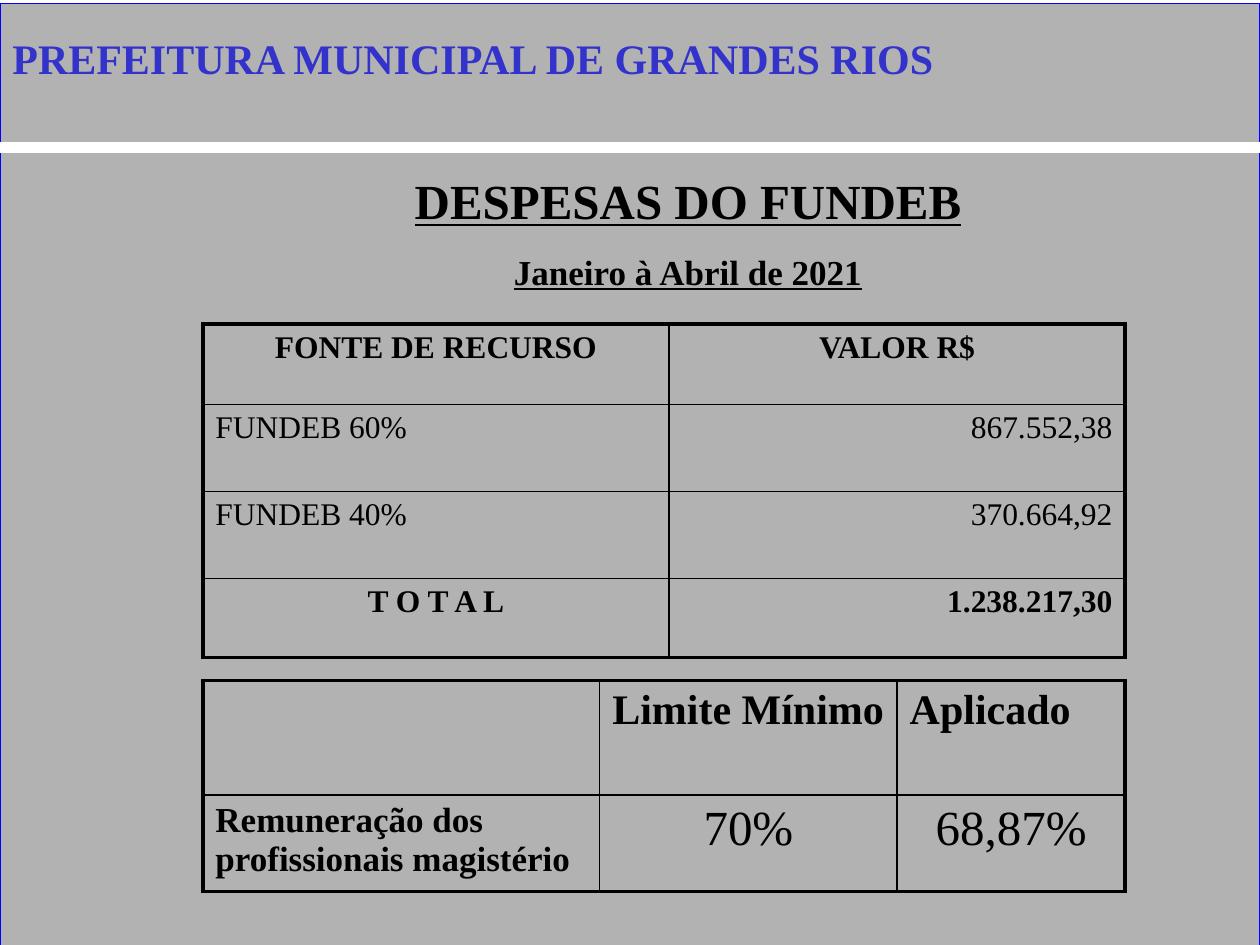
from dataclasses import dataclass

import pptx
import pptx.dml.color
import pptx.enum.shapes
import pptx.enum.text
import pptx.oxml
import pptx.oxml.ns
import pptx.util

Inches = pptx.util.Inches
Pt = pptx.util.Pt
ALIGN = pptx.enum.text.PP_ALIGN


@dataclass(frozen=True)
class Theme:
    font: str = "Times New Roman"
    ink: str = "000000"
    title: str = "3333CC"
    shadow: str = "808080"
    panel: str = "B2B2B2"
    panel_edge: str = "0000FF"
    rule: str = "FFFFFF"
    heading: int = 28
    banner: int = 24
    period: int = 20
    body: int = 18
    outer_border: float = 2.25
    inner_border: float = 1


THEME = Theme()
LEFT = {"alignment": ALIGN.LEFT}
CENTER = {"alignment": ALIGN.CENTER}
RIGHT = {"alignment": ALIGN.RIGHT}
BOLD = {"bold": True}


def rgb(value):
    return pptx.dml.color.RGBColor.from_string(value)


def drawing_xml(tag, attributes="", content=""):
    return pptx.oxml.parse_xml(
        f'<a:{tag} {pptx.oxml.ns.nsdecls("a")} {attributes}>{content}</a:{tag}>')


def solid(color):
    return f'<a:solidFill><a:srgbClr val="{color}"/></a:solidFill>'


def apply(target, formats):
    for name, value in formats.items():
        setattr(target, name, value)


def write(paragraph, text, size, font_format, paragraph_format, color=THEME.ink):
    apply(paragraph, paragraph_format)
    run = paragraph.add_run()
    run.text = text
    apply(run.font, {"name": THEME.font, "size": Pt(size), "bold": False, **font_format})
    run.font.color.rgb = rgb(color)
    return run


def add_text_frame(slide, box):
    frame = slide.shapes.add_textbox(*map(Inches, box)).text_frame
    frame.word_wrap = True
    return frame


def add_background(slide, box, rule_offset):
    left, top, width, height = box
    panel = slide.shapes.add_shape(
        pptx.enum.shapes.MSO_SHAPE.RECTANGLE, *map(Inches, box))
    panel.shadow.inherit = False
    panel.fill.solid()
    panel.fill.fore_color.rgb = rgb(THEME.panel)
    panel.line.color.rgb = rgb(THEME.panel_edge)
    panel.line.width = Pt(0.75)

    rule_y = Inches(top + rule_offset)
    rule = slide.shapes.add_connector(
        pptx.enum.shapes.MSO_CONNECTOR.STRAIGHT,
        Inches(left), rule_y, Inches(left + width), rule_y)
    rule.line.color.rgb = rgb(THEME.rule)
    rule.line.width = Pt(6)
    rule._element.spPr.append(drawing_xml("effectLst"))


def add_banner(slide, box):
    frame = add_text_frame(slide, box)
    title = write(frame.paragraphs[0], "PREFEITURA MUNICIPAL DE GRANDES RIOS",
                  THEME.banner, BOLD, LEFT, THEME.title)
    shadow = (f'<a:outerShdw dist="35921" dir="2700000">'
              f'<a:srgbClr val="{THEME.shadow}"/></a:outerShdw>')
    title.font.fill._xPr.find(pptx.oxml.ns.qn("a:solidFill")).addnext(
        drawing_xml("effectLst", content=shadow))


def add_heading(slide, box):
    frame = add_text_frame(slide, box)
    underlined = {"bold": True, "underline": True}
    spaced = {**CENTER, "line_spacing": 1.5}
    write(frame.paragraphs[0], "DESPESAS DO FUNDEB", THEME.heading, underlined, spaced)
    write(frame.add_paragraph(), "Janeiro à Abril de 2021", THEME.period, underlined, spaced)


def set_borders(cell, outer_sides):
    """Draw all four sides, heavier on those at the table's edge."""
    properties = cell._tc.get_or_add_tcPr()
    for side in "LRTB":
        width = THEME.outer_border if side in outer_sides else THEME.inner_border
        properties.append(drawing_xml(
            f"ln{side}", f'w="{int(Pt(width))}"', solid(THEME.ink)))


def add_grid(slide, box, column_widths, row_heights, rows):
    """Each entry of rows is (text, size, font format, paragraph format)."""
    table = slide.shapes.add_table(
        len(row_heights), len(column_widths), *map(Inches, box)).table
    apply(table, {"first_row": False, "horz_banding": False})
    for column, width in zip(table.columns, column_widths):
        column.width = Inches(width)
    last_row, last_column = len(row_heights) - 1, len(column_widths) - 1
    for r, (height, entries) in enumerate(zip(row_heights, rows)):
        table.rows[r].height = Inches(height)
        for c, entry in enumerate(entries):
            cell = table.cell(r, c)
            edges = {"T": r == 0, "B": r == last_row, "L": c == 0, "R": c == last_column}
            set_borders(cell, [side for side, at_edge in edges.items() if at_edge])
            cell.fill.background()
            if entry:
                write(cell.text_frame.paragraphs[0], *entry)


def add_expenses(slide, box):
    size = THEME.body
    add_grid(slide, box, [3.7, 3.62], [0.64, 0.69, 0.69, 0.63], [
        [("FONTE DE RECURSO", size, BOLD, CENTER), ("VALOR R$", size, BOLD, CENTER)],
        [("FUNDEB 60%", size, {}, LEFT), ("867.552,38", size, {}, RIGHT)],
        [("FUNDEB 40%", size, {}, LEFT), ("370.664,92", size, {}, RIGHT)],
        [("T O T A L", size, BOLD, CENTER), ("1.238.217,30", size, BOLD, RIGHT)],
    ])


def add_limits(slide, box):
    add_grid(slide, box, [3.15, 2.36, 1.81], [0.91, 0.76], [
        [None, ("Limite Mínimo", THEME.banner, BOLD, LEFT),
         ("Aplicado", THEME.banner, BOLD, LEFT)],
        [("Remuneração dos profissionais magistério", THEME.period, BOLD, LEFT),
         ("70%", THEME.heading, {}, CENTER), ("68,87%", THEME.heading, {}, CENTER)],
    ])


def main():
    deck = pptx.Presentation()
    apply(deck, {"slide_width": Inches(10), "slide_height": Inches(7.5)})
    slide = deck.slides.add_slide(deck.slide_layouts[6])
    add_background(slide, (0, 0.03, 10, 7.5), rule_offset=1.14)
    add_heading(slide, (1.42, 1.07, 8.08, 5.51))
    add_expenses(slide, (1.61, 2.57, 7.32, 2.65))
    add_limits(slide, (1.61, 5.4, 7.32, 1.67))
    add_banner(slide, (0, 0.21, 9.49, 0.5))
    deck.save("out.pptx")


if __name__ == "__main__":
    main()
